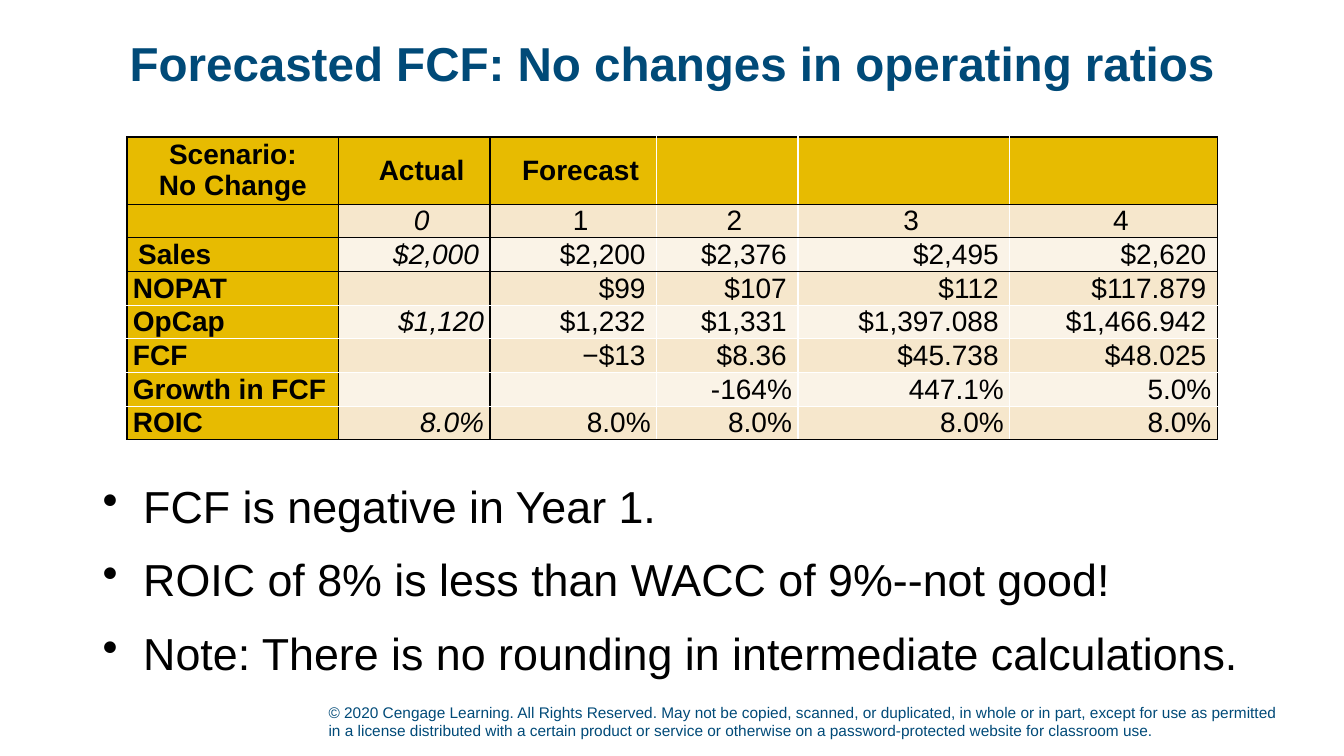
import dataclasses

import pptx
import pptx.dml.color
import pptx.enum.text
import pptx.oxml
import pptx.oxml.ns
import pptx.util

Cm = pptx.util.Cm
Pt = pptx.util.Pt
Align = pptx.enum.text.PP_ALIGN
Anchor = pptx.enum.text.MSO_ANCHOR


@dataclasses.dataclass(frozen=True)
class Theme:
    font: str = "Arial"
    blue: str = "004A78"
    black: str = "000000"
    white: str = "FFFFFF"
    gold: str = "E7BB01"
    sand: str = "F6E7CC"
    cream: str = "FAF3E7"
    title: int = 34
    body: int = 32
    cell: int = 20
    note: int = 11


HEAD = ["Scenario:\nNo Change", "Actual", "Forecast", "", "", ""]
ROWS = [
    HEAD,
    ["", "0", "1", "2", "3", "4"],
    ["Sales", "$2,000", "$2,200", "$2,376", "$2,495", "$2,620"],
    ["NOPAT", "", "$99", "$107", "$112", "$117.879"],
    ["OpCap", "$1,120", "$1,232", "$1,331", "$1,397.088", "$1,466.942"],
    ["FCF", "", "−$13", "$8.36", "$45.738", "$48.025"],
    ["Growth in FCF", "", "", "-164%", "447.1%", "5.0%"],
    ["ROIC", "8.0%", "8.0%", "8.0%", "8.0%", "8.0%"],
]
WIDTHS = [5.34, 3.81, 4.2, 3.56, 5.34, 5.23]
POINTS = [
    "FCF is negative in Year 1.",
    "ROIC of 8% is less than WACC of 9%--not good!",
    "Note: There is no rounding in intermediate calculations.",
]
NOTE = (
    "© 2020 Cengage Learning. All Rights Reserved. May not be copied, scanned, "
    "or duplicated, in whole or in part, except for use as permitted in a license "
    "distributed with a certain product or service or otherwise on a "
    "password-protected website for classroom use."
)


class Page:
    def __init__(self, slide, theme):
        self.slide = slide
        self.theme = theme

    def run(self, para, text, size, color, bold=False, italic=False):
        run = para.add_run()
        run.text = text
        font = run.font
        font.name, font.size = self.theme.font, Pt(size)
        font.bold, font.italic = bold, italic
        font.color.rgb = pptx.dml.color.RGBColor.from_string(color)

    def box(self, left, top, width, height, anchor):
        shape = self.slide.shapes.add_textbox(Cm(left), Cm(top), Cm(width), Cm(height))
        frame = shape.text_frame
        frame.word_wrap = True
        frame.vertical_anchor = anchor
        return frame

    def title(self, text):
        para = self.box(2.34, 0.38, 29.21, 2.54, Anchor.MIDDLE).paragraphs[0]
        para.alignment = Align.CENTER
        para.line_spacing = 0.95
        self.run(para, text, self.theme.title, self.theme.blue, bold=True)

    def note(self, text):
        para = self.box(8.03, 17.5, 24.46, 1.27, Anchor.BOTTOM).paragraphs[0]
        self.run(para, text, self.theme.note, self.theme.blue)

    def points(self, items):
        frame = self.box(2.34, 11.94, 29.21, 5.54, Anchor.TOP)
        for at, text in enumerate(items):
            para = frame.add_paragraph() if at else frame.paragraphs[0]
            props = para._p.get_or_add_pPr()
            props.set("marL", str(Cm(1.02)))
            props.set("indent", str(Cm(-1.02)))
            mark = pptx.oxml.ns.qn("a:buChar")
            props.append(props.makeelement(mark, {"char": "•"}))
            para.space_before = Pt(7 if at else 0)
            para.space_after = Pt(7)
            self.run(para, text, self.theme.body, self.theme.black)

    def edge(self, cell, side, color):
        """Draw one border; side is L, R, T or B."""
        space = pptx.oxml.ns.nsdecls("a")
        cell._tc.get_or_add_tcPr().append(pptx.oxml.parse_xml(
            f'<a:ln{side} {space} w="{Pt(1)}"><a:solidFill>'
            f'<a:srgbClr val="{color}"/></a:solidFill></a:ln{side}>'))

    def cell(self, cell, row, col, text):
        look = self.theme
        # Rules between forecast years and between the lower rows are white.
        across = [look.white if 3 <= x <= 5 else look.black for x in (col, col + 1)]
        down = [look.white if 4 <= y <= 7 else look.black for y in (row, row + 1)]
        for side, color in zip("LRTB", across + down):
            self.edge(cell, side, color)

        label = row == 0 or col == 0
        fill = look.gold if label else look.sand if row % 2 else look.cream
        cell.fill.solid()
        cell.fill.fore_color.rgb = pptx.dml.color.RGBColor.from_string(fill)
        cell.vertical_anchor = Anchor.MIDDLE
        tight = (col == 0 and row != 2) or row >= 6 or (row, col) == (4, 1)
        cell.margin_left = cell.margin_right = Cm(0.15 if tight else 0.28)
        cell.margin_top = cell.margin_bottom = 0

        frame = cell.text_frame
        for at, line in enumerate(text.split("\n") if text else []):
            para = frame.add_paragraph() if at else frame.paragraphs[0]
            if row < 2:
                para.alignment = Align.CENTER
                if col:
                    para._p.get_or_add_pPr().set("indent", str(Cm(0.36)))
            else:
                para.alignment = Align.RIGHT if col else Align.LEFT
            self.run(para, line, look.cell, look.black,
                     bold=label, italic=col == 1 and row > 0)

    def table(self, rows, widths):
        frame = self.slide.shapes.add_table(
            len(rows), len(widths), Cm(3.2), Cm(3.45),
            Cm(sum(widths)), Cm(0.76 * len(rows)))
        table = frame.table
        for col, width in zip(table.columns, widths):
            col.width = Cm(width)
        for y, row in enumerate(rows):
            table.rows[y].height = Cm(0.76)
            for x, text in enumerate(row):
                self.cell(table.cell(y, x), y, x, text)


def main():
    deck = pptx.Presentation()
    deck.slide_width, deck.slide_height = Cm(33.87), Cm(19.05)
    page = Page(deck.slides.add_slide(deck.slide_layouts[6]), Theme())
    page.note(NOTE)
    page.title("Forecasted FCF: No changes in operating ratios")
    page.table(ROWS, WIDTHS)
    page.points(POINTS)
    deck.save("out.pptx")


if __name__ == "__main__":
    main()
